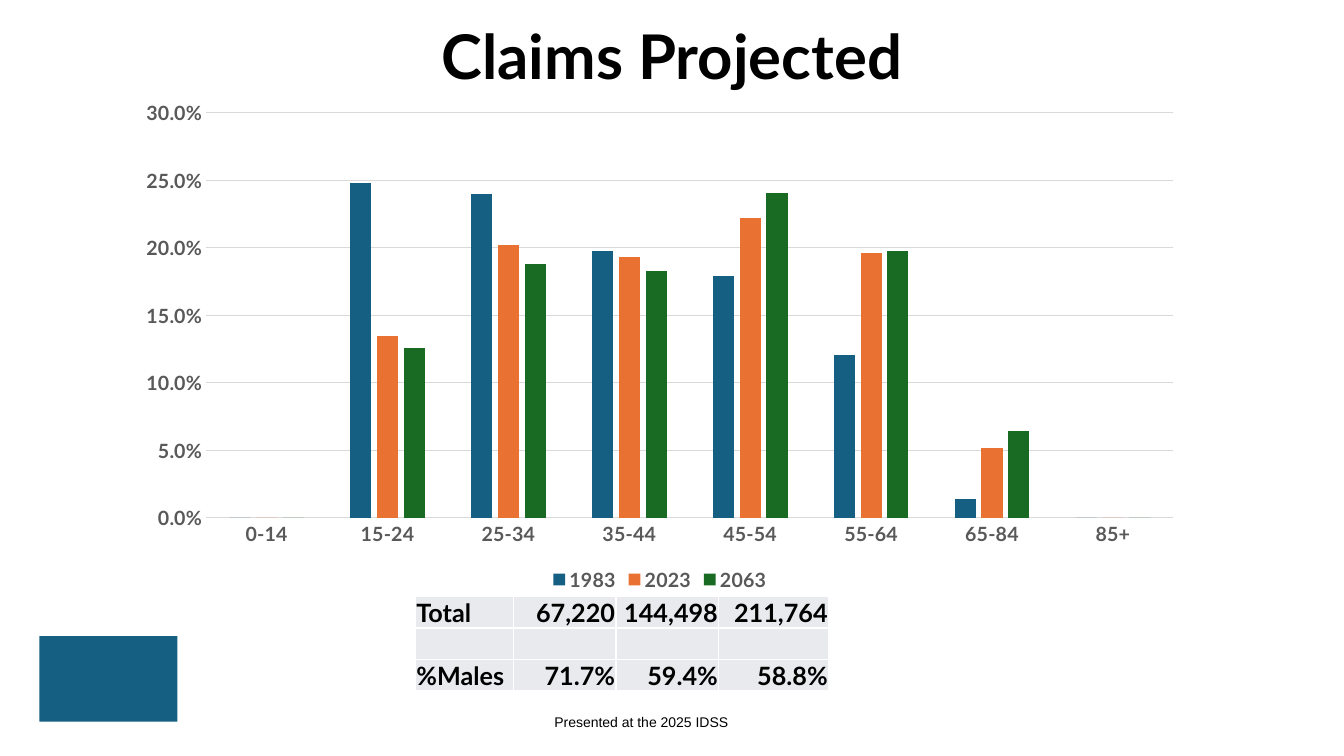
from lxml import etree
from pptx import Presentation
from pptx.chart.data import CategoryChartData
from pptx.dml.color import RGBColor
from pptx.enum.chart import XL_CHART_TYPE, XL_LEGEND_POSITION, XL_TICK_MARK
from pptx.enum.shapes import MSO_SHAPE
from pptx.enum.text import MSO_ANCHOR, PP_ALIGN
from pptx.oxml.ns import qn
from pptx.util import Inches, Pt

COLUMN = XL_CHART_TYPE.COLUMN_CLUSTERED
BELOW = XL_LEGEND_POSITION.BOTTOM
NO_TICK = XL_TICK_MARK.NONE
BOX = MSO_SHAPE.RECTANGLE
TOP, BOTTOM = MSO_ANCHOR.TOP, MSO_ANCHOR.BOTTOM
LEFT, CENTER, RIGHT = PP_ALIGN.LEFT, PP_ALIGN.CENTER, PP_ALIGN.RIGHT

BLACK = RGBColor(0x00, 0x00, 0x00)
WHITE = RGBColor(0xFF, 0xFF, 0xFF)
GRAY = RGBColor(0x59, 0x59, 0x59)
RULE = RGBColor(0xD9, 0xD9, 0xD9)
PALE = RGBColor(0xE8, 0xEA, 0xED)
BLUE = RGBColor(0x15, 0x60, 0x82)
ORANGE = RGBColor(0xE9, 0x71, 0x32)
GREEN = RGBColor(0x19, 0x6B, 0x24)

TITLE = {"name": "Lato", "size": Pt(44), "bold": True}
NOTE = {"name": "Arial", "size": Pt(10), "bold": False}
LABEL = {"name": "Lato", "size": Pt(14), "bold": True}
CELL = {"name": "Lato", "size": Pt(18), "bold": True}
INSET = {"margin_left": Inches(0.01), "margin_right": Inches(0.01),
         "margin_top": Inches(0.01), "margin_bottom": 0,
         "vertical_anchor": BOTTOM}

AGES = ["0-14", "15-24", "25-34", "35-44", "45-54", "55-64", "65-84", "85+"]
CLAIMS = [
    ("1983", BLUE, [0, 24.8, 24, 19.8, 17.9, 12.1, 1.4, 0]),
    ("2023", ORANGE, [0, 13.5, 20.2, 19.3, 22.2, 19.6, 5.2, 0]),
    ("2063", GREEN, [0, 12.6, 18.8, 18.3, 24.1, 19.8, 6.4, 0]),
]
TOTALS = [
    ["Total", "67,220", "144,498", "211,764"],
    ["", "", "", ""],
    ["%Males", "71.7%", "59.4%", "58.8%"],
]
WIDTHS = [0.97, 1.02, 1.02, 1.09]
HEIGHT = 0.31


def assign(item, values):
    """Set each named attribute of an item."""
    for name, value in values.items():
        setattr(item, name, value)


def style(font, values, color):
    """Give a font its format and colour."""
    assign(font, values)
    font.color.rgb = color


def place(*sizes):
    """Turn numbers into lengths in inches."""
    return [Inches(size) for size in sizes]


def add_text(slide, text, area, font, inset, anchor, spacing):
    """Add one centred line of text."""
    frame = slide.shapes.add_textbox(*place(*area)).text_frame
    side, edge = place(*inset)
    assign(frame, {"word_wrap": True, "vertical_anchor": anchor,
                   "margin_left": side, "margin_right": side,
                   "margin_top": edge, "margin_bottom": edge})
    line = frame.paragraphs[0]
    assign(line, {"text": text, "alignment": CENTER, "line_spacing": spacing})
    style(line.runs[0].font, font, BLACK)


def add_mark(slide):
    """Add the plain block in the lower left corner."""
    mark = slide.shapes.add_shape(BOX, *place(0.39, 6.31, 1.37, 0.85))
    mark.shadow.inherit = False
    mark.fill.solid()
    mark.fill.fore_color.rgb = BLUE
    mark.line.fill.background()


def draw_rule(line):
    """Give a chart line the pale rule format."""
    line.color.rgb = RULE
    line.width = Pt(0.75)


def add_claims(slide):
    """Add the column chart of claims by age."""
    data = CategoryChartData(number_format="0.0%")
    data.categories = AGES
    for year, _, shares in CLAIMS:
        data.add_series(year, [round(share / 100, 3) for share in shares])
    frame = slide.shapes.add_chart(COLUMN, *place(1.24, 0.9, 10.61, 5.01), data)
    chart = frame.chart
    assign(chart, {"has_title": False, "has_legend": True})
    style(chart.font, LABEL, GRAY)
    assign(chart.legend, {"position": BELOW, "include_in_layout": False})
    style(chart.legend.font, LABEL, GRAY)

    plot = chart.plots[0]
    assign(plot, {"gap_width": 219, "overlap": -27, "vary_by_categories": False})
    for series, (_, color, _) in zip(plot.series, CLAIMS):
        series.format.fill.solid()
        series.format.fill.fore_color.rgb = color

    ages, shares = chart.category_axis, chart.value_axis
    for axis in (ages, shares):
        assign(axis, {"major_tick_mark": NO_TICK, "minor_tick_mark": NO_TICK})
        style(axis.tick_labels.font, LABEL, GRAY)
    draw_rule(ages.format.line)
    assign(shares, {"minimum_scale": 0, "maximum_scale": 0.3,
                    "major_unit": 0.05, "has_major_gridlines": True})
    assign(shares.tick_labels, {"number_format": "0.0%",
                                "number_format_is_linked": False})
    shares.format.line.fill.background()
    draw_rule(shares.major_gridlines.format.line)


def add_edges(cell):
    """Draw white borders round a cell."""
    props = cell._tc.get_or_add_tcPr()
    for index, side in enumerate(("lnL", "lnR", "lnT", "lnB")):
        edge = etree.Element(qn("a:" + side), w=str(Pt(1)))
        fill = etree.SubElement(edge, qn("a:solidFill"))
        etree.SubElement(fill, qn("a:srgbClr"), val=str(WHITE))
        props.insert(index, edge)


def add_totals(slide):
    """Add the table of totals and male shares."""
    area = place(4.12, 5.92, sum(WIDTHS), HEIGHT * len(TOTALS))
    table = slide.shapes.add_table(len(TOTALS), len(WIDTHS), *area).table
    assign(table, {"first_row": False, "horz_banding": False})
    for column, width in zip(table.columns, WIDTHS):
        column.width = Inches(width)
    for row, texts in zip(table.rows, TOTALS):
        row.height = Inches(HEIGHT)
        for index, (cell, text) in enumerate(zip(row.cells, texts)):
            assign(cell, INSET)
            cell.fill.solid()
            cell.fill.fore_color.rgb = PALE
            add_edges(cell)
            line = cell.text_frame.paragraphs[0]
            line.alignment = RIGHT if index else LEFT
            if text:
                line.text = text
                style(line.runs[0].font, CELL, BLACK)


def main():
    """Build the slide and save it."""
    deck = Presentation()
    assign(deck, {"slide_width": Inches(13.33), "slide_height": Inches(7.5)})
    slide = deck.slides.add_slide(deck.slide_layouts[6])
    add_mark(slide)
    add_text(slide, "Presented at the 2025 IDSS", (4.11, 7.05, 4.5, 0.2),
             NOTE, (0, 0), BOTTOM, 1)
    add_text(slide, "Claims Projected", (1.36, 0.21, 10.61, 0.45),
             TITLE, (0.1, 0.05), TOP, 0.9)
    add_claims(slide)
    add_totals(slide)
    deck.save("out.pptx")


if __name__ == "__main__":
    main()
